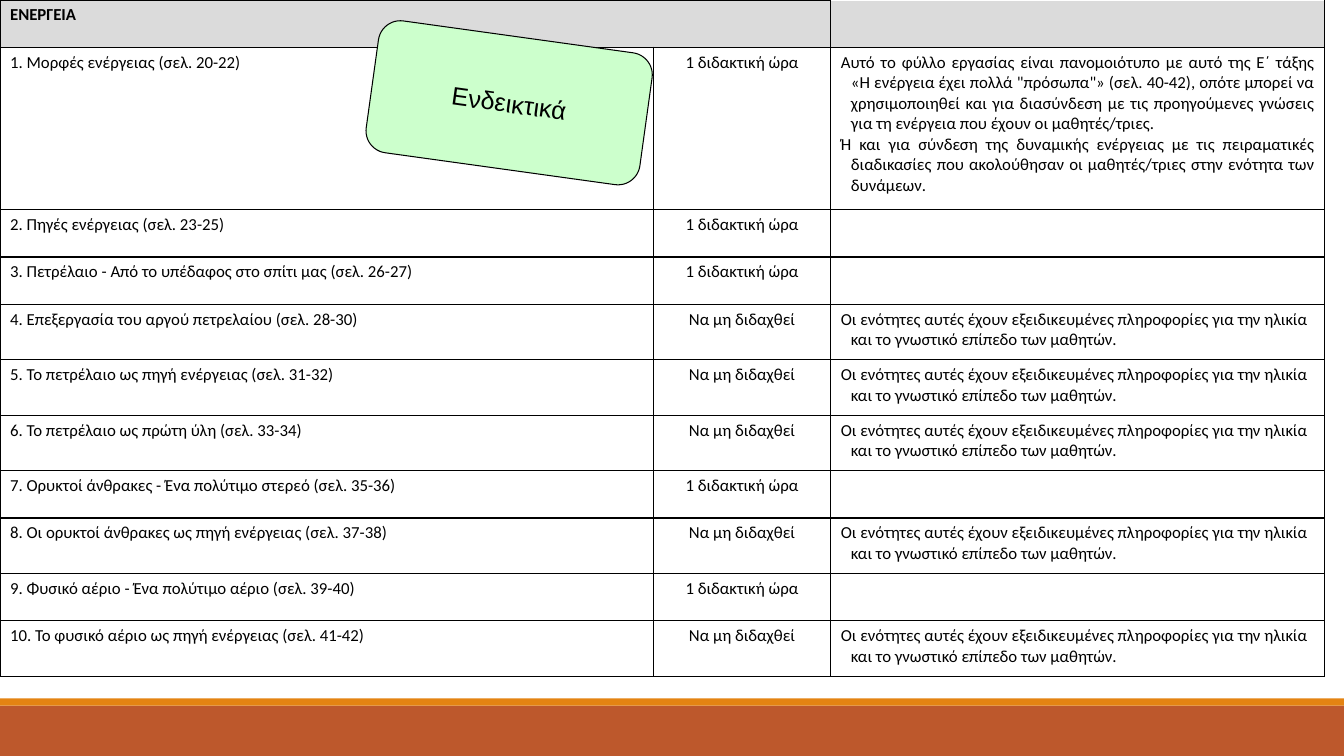
from dataclasses import dataclass

from lxml import etree
from pptx import Presentation, util as u
from pptx.dml.color import RGBColor
from pptx.enum import shapes, text
from pptx.oxml.ns import qn


@dataclass(frozen=True)
class Theme:
    ink: str = "000000"
    heading_fill: str = "DBDBDB"
    footer: str = "BD582C"
    footer_edge: str = "E48312"
    badge: str = "CCFFCC"
    table_font: str = "Calibri"
    badge_font: str = "Arial"
    table_size: int = 12
    badge_size: int = 18
    border: float = 1
    badge_line: float = 0.75
    hanging: float = 0.1


THEME = Theme()
WIDTH, HEIGHT = 13.33, 7.5
COLUMNS = (6.48, 1.76, 4.9)
HEADING_ROW, SHORT_ROW, NOTE_ROW, LONG_ROW = 0.47, 0.47, 0.55, 1.61
LEFT, CENTER, JUSTIFY = (text.PP_ALIGN.LEFT, text.PP_ALIGN.CENTER,
                         text.PP_ALIGN.JUSTIFY)

HEADING = "ΕΝΕΡΓΕΙΑ"
TAUGHT, SKIPPED = "1 διδακτική ώρα", "Να μη διδαχθεί"
SKIP_NOTE = ("Οι ενότητες αυτές έχουν εξειδικευμένες πληροφορίες για την ηλικία "
             "και το γνωστικό επίπεδο των μαθητών.",)
FORMS_NOTE = (
    "Αυτό το φύλλο εργασίας είναι πανομοιότυπο με αυτό της Ε΄ τάξης "
    "«Η ενέργεια έχει πολλά \"πρόσωπα\"» (σελ. 40-42), οπότε μπορεί να "
    "χρησιμοποιηθεί και για διασύνδεση με τις προηγούμενες γνώσεις για τη "
    "ενέργεια που έχουν οι μαθητές/τριες.",
    "Ή και για σύνδεση της δυναμικής ενέργειας με τις πειραματικές διαδικασίες "
    "που ακολούθησαν οι μαθητές/τριες στην ενότητα των δυνάμεων.",
)
UNITS = (
    ("Μορφές ενέργειας (σελ. 20-22)", TAUGHT),
    ("Πηγές ενέργειας (σελ. 23-25)", TAUGHT),
    ("Πετρέλαιο - Από το υπέδαφος στο σπίτι μας (σελ. 26-27)", TAUGHT),
    ("Επεξεργασία του αργού πετρελαίου (σελ. 28-30)", SKIPPED),
    ("Το πετρέλαιο ως πηγή ενέργειας (σελ. 31-32)", SKIPPED),
    ("Το πετρέλαιο ως πρώτη ύλη (σελ. 33-34)", SKIPPED),
    ("Ορυκτοί άνθρακες - Ένα πολύτιμο στερεό (σελ. 35-36)", TAUGHT),
    ("Οι ορυκτοί άνθρακες ως πηγή ενέργειας (σελ. 37-38)", SKIPPED),
    ("Φυσικό αέριο - Ένα πολύτιμο αέριο (σελ. 39-40)", TAUGHT),
    ("Το φυσικό αέριο ως πηγή ενέργειας (σελ. 41-42)", SKIPPED),
)


def rgb(value):
    return RGBColor.from_string(value)


def add_run(paragraph, words, font_name, size, bold=False):
    run = paragraph.add_run()
    run.text = words
    run.font.name = font_name
    run.font.size = u.Pt(size)
    run.font.bold = bold
    run.font.color.rgb = rgb(THEME.ink)


def add_block(slide, preset, left, top, width, height, fill):
    block = slide.shapes.add_shape(preset, u.Inches(left), u.Inches(top),
                                   u.Inches(width), u.Inches(height))
    block.shadow.inherit = False
    block.fill.solid()
    block.fill.fore_color.rgb = rgb(fill)
    block.line.fill.background()
    return block


def add_footer(slide):
    for top, depth, fill in ((7, 0.5, THEME.footer),
                             (6.93, 0.07, THEME.footer_edge)):
        add_block(slide, shapes.MSO_SHAPE.RECTANGLE, 0, top, WIDTH, depth, fill)


def draw_borders(cell, sides):
    properties = cell._tc.get_or_add_tcPr()
    for side in sides:
        border = etree.SubElement(properties, qn(f"a:ln{side}"),
                                  w=str(u.Pt(THEME.border)))
        solid = etree.SubElement(border, qn("a:solidFill"))
        etree.SubElement(solid, qn("a:srgbClr"), val=THEME.ink)


def style_cell(cell, fill=None, sides="LRTB"):
    draw_borders(cell, sides)
    if fill:
        cell.fill.solid()
        cell.fill.fore_color.rgb = rgb(fill)
    else:
        cell.fill.background()


def write_cell(cell, lines, align=LEFT, bold=False):
    for index, line in enumerate(lines):
        frame = cell.text_frame
        paragraph = frame.add_paragraph() if index else frame.paragraphs[0]
        paragraph.alignment = align
        hanging = u.Inches(THEME.hanging)
        properties = paragraph._p.get_or_add_pPr()
        properties.set("marL", str(hanging))
        properties.set("indent", str(-hanging))
        add_run(paragraph, line, THEME.table_font, THEME.table_size, bold)


def unit_layout(number, duration):
    if number == 1:
        return FORMS_NOTE, JUSTIFY, LONG_ROW
    if duration == SKIPPED:
        return SKIP_NOTE, LEFT, NOTE_ROW
    return (), LEFT, SHORT_ROW


def add_heading(table):
    name, covered, remarks = table.rows[0].cells
    style_cell(name, THEME.heading_fill)
    style_cell(covered, THEME.heading_fill)
    style_cell(remarks, THEME.heading_fill, "LRB")
    name.merge(covered)
    write_cell(name, (HEADING,), bold=True)


def add_schedule(slide):
    layouts = [unit_layout(number, duration)
               for number, (_, duration) in enumerate(UNITS, 1)]
    heights = [HEADING_ROW] + [height for _, _, height in layouts]
    table = slide.shapes.add_table(
        len(heights), len(COLUMNS), 0, 0,
        u.Inches(sum(COLUMNS)), u.Inches(sum(heights))).table
    table.first_row = table.horz_banding = False
    for column, width in zip(table.columns, COLUMNS):
        column.width = u.Inches(width)
    for row, height in zip(table.rows, heights):
        row.height = u.Inches(height)
    add_heading(table)
    for number, ((unit, duration), (note, align, _)) in enumerate(
            zip(UNITS, layouts), 1):
        name, hours, remarks = table.rows[number].cells
        for cell in (name, hours, remarks):
            style_cell(cell)
        write_cell(name, (f"{number}. {unit}",))
        write_cell(hours, (duration,), CENTER)
        write_cell(remarks, note, align)


def add_badge(slide):
    badge = add_block(slide, shapes.MSO_SHAPE.ROUNDED_RECTANGLE,
                      3.68, 0.36, 2.74, 1.32, THEME.badge)
    badge.rotation = 7.9
    badge.line.color.rgb = rgb(THEME.ink)
    badge.line.width = u.Pt(THEME.badge_line)
    frame = badge.text_frame
    frame.word_wrap = False
    frame.vertical_anchor = text.MSO_ANCHOR.MIDDLE
    paragraph = frame.paragraphs[0]
    paragraph.alignment = CENTER
    add_run(paragraph, "Ενδεικτικά", THEME.badge_font, THEME.badge_size)


def main():
    deck = Presentation()
    deck.slide_width, deck.slide_height = u.Inches(WIDTH), u.Inches(HEIGHT)
    slide = deck.slides.add_slide(deck.slide_layouts[6])
    add_footer(slide)
    add_schedule(slide)
    add_badge(slide)
    deck.save("out.pptx")


if __name__ == "__main__":
    main()
